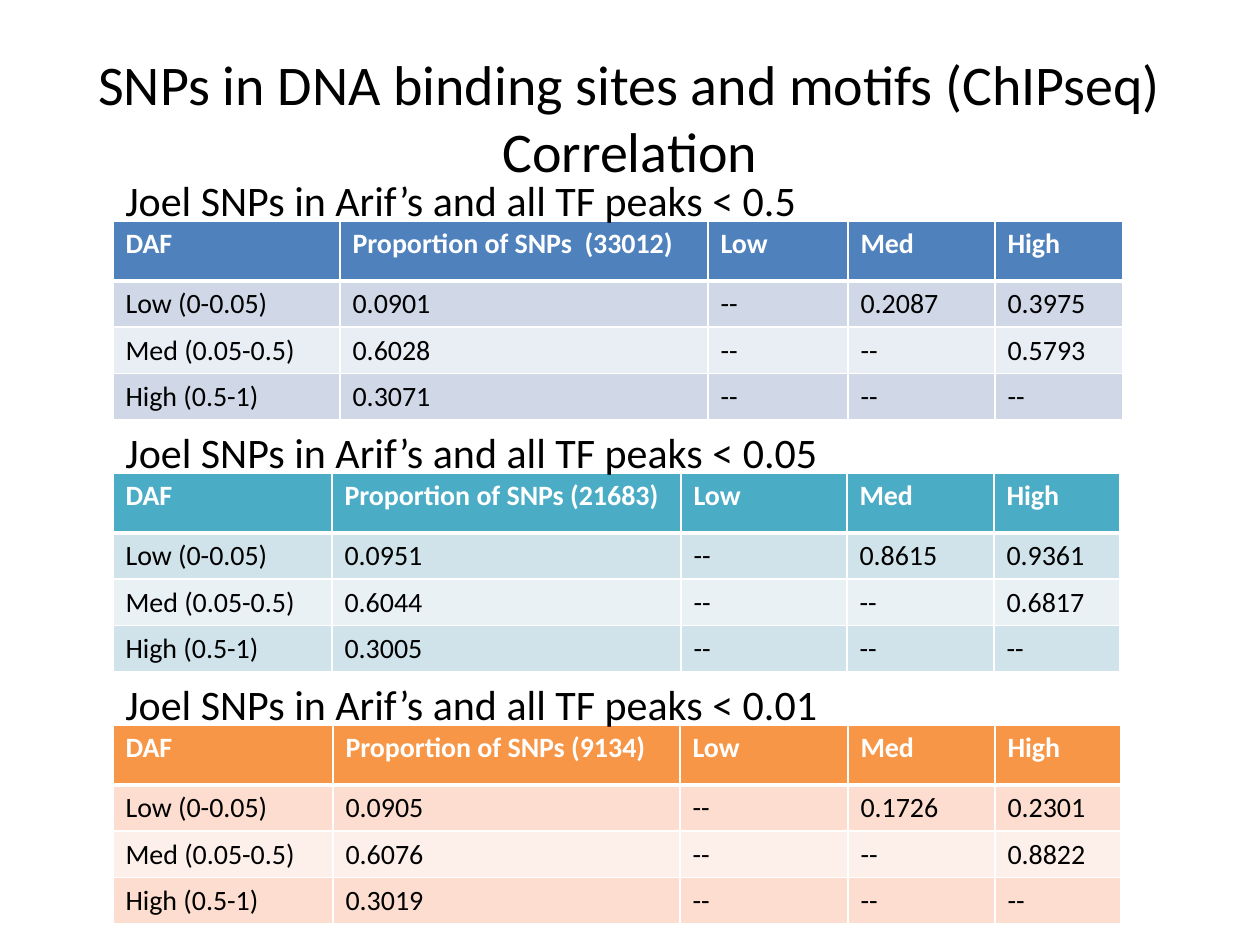
from lxml import etree
from pptx import Presentation, util as u
from pptx.dml.color import RGBColor
from pptx.enum import text
from pptx.oxml import ns

TITLE = "SNPs in DNA binding sites and motifs (ChIPseq) Correlation"
HEADING = "Joel SNPs in Arif’s and all TF peaks < "
BANDS = ["Low (0-0.05)", "Med (0.05-0.5)", "High (0.5-1)"]
NONE = "--"
TABLES = [
    {"cutoff": "0.5", "label": "Proportion of SNPs  (33012)", "theme": "blue",
     "cols": [227, 368, 140, 147, 128], "heading_width": 759,
     "shares": ["0.0901", "0.6028", "0.3071"],
     "low_med": "0.2087", "low_high": "0.3975", "med_high": "0.5793"},
    {"cutoff": "0.05", "label": "Proportion of SNPs (21683)", "theme": "teal",
     "cols": [219, 349, 166, 147, 126], "heading_width": 725,
     "shares": ["0.0951", "0.6044", "0.3005"],
     "low_med": "0.8615", "low_high": "0.9361", "med_high": "0.6817"},
    {"cutoff": "0.01", "label": "Proportion of SNPs (9134)", "theme": "orange",
     "cols": [220, 347, 168, 147, 126], "heading_width": 779,
     "shares": ["0.0905", "0.6076", "0.3019"],
     "low_med": "0.1726", "low_high": "0.2301", "med_high": "0.8822"},
]
COLORS = {
    "black": "000000", "white": "FFFFFF",
    "blue": "4F81BD", "blue_odd": "D0D8E8", "blue_even": "E9EDF4",
    "teal": "4BACC6", "teal_odd": "D0E3EA", "teal_even": "E9F1F5",
    "orange": "F79646", "orange_odd": "FCDDCF", "orange_even": "FDEFE9",
}
FONT = "Calibri"
PX = u.Inches(1) / 126
LEFT, FIRST_TOP, PITCH, HEADING_RISE = 113, 221, 252, 53
ROW_HEIGHTS = [60, 46, 46, 46]


def px(n):
    return u.Emu(round(n * PX))


def color(name):
    return RGBColor.from_string(COLORS[name])


def style(p, size, name="black", bold=False):
    for r in p.runs:
        r.font.name, r.font.size, r.font.bold = FONT, u.Pt(size), bold
        r.font.color.rgb = color(name)


def add_text(s, content, box, size):
    tf = s.shapes.add_textbox(*map(px, box)).text_frame
    tf.word_wrap = True
    tf.text = content
    style(tf.paragraphs[0], size)
    return tf


def add_borders(cell, bottom):
    tc_pr = cell._tc.get_or_add_tcPr()
    for side, width in [("L", 1), ("R", 1), ("T", 1), ("B", bottom)]:
        ln = etree.SubElement(tc_pr, ns.qn(f"a:ln{side}"), w=str(u.Pt(width)))
        fill = etree.SubElement(ln, ns.qn("a:solidFill"))
        etree.SubElement(fill, ns.qn("a:srgbClr"), val=COLORS["white"])


def table_rows(data):
    upper = [[NONE, data["low_med"], data["low_high"]],
             [NONE, NONE, data["med_high"]],
             [NONE, NONE, NONE]]
    body = [[band, share, *values]
            for band, share, values in zip(BANDS, data["shares"], upper)]
    return [["DAF", data["label"], "Low", "Med", "High"], *body]


def add_correlation(s, data, top):
    rows, cols = table_rows(data), data["cols"]
    frame = s.shapes.add_table(len(rows), len(cols), px(LEFT), px(top),
                               px(sum(cols)), px(sum(ROW_HEIGHTS)))
    table = frame.table
    for column, width in zip(table.columns, cols):
        column.width = px(width)
    for i, values in enumerate(rows):
        table.rows[i].height = px(ROW_HEIGHTS[i])
        header = i == 0
        shade = "" if header else "_odd" if i % 2 else "_even"
        for j, value in enumerate(values):
            cell = table.cell(i, j)
            cell.text = value
            style(cell.text_frame.paragraphs[0], 16,
                  "white" if header else "black", header)
            add_borders(cell, 3 if header else 1)
            cell.fill.solid()
            cell.fill.fore_color.rgb = color(data["theme"] + shade)
    add_text(s, HEADING + data["cutoff"],
             (LEFT, top - HEADING_RISE, data["heading_width"], 63), 24)


def main():
    prs = Presentation()
    prs.slide_width, prs.slide_height = px(1260), px(945)
    s = prs.slides.add_slide(prs.slide_layouts[6])
    tf = add_text(s, TITLE, (63, 38, 1134, 157), 32)
    tf.vertical_anchor = text.MSO_ANCHOR.MIDDLE
    tf.paragraphs[0].alignment = text.PP_ALIGN.CENTER
    for i, data in enumerate(TABLES):
        add_correlation(s, data, FIRST_TOP + i * PITCH)
    prs.save("out.pptx")


if __name__ == "__main__":
    main()
